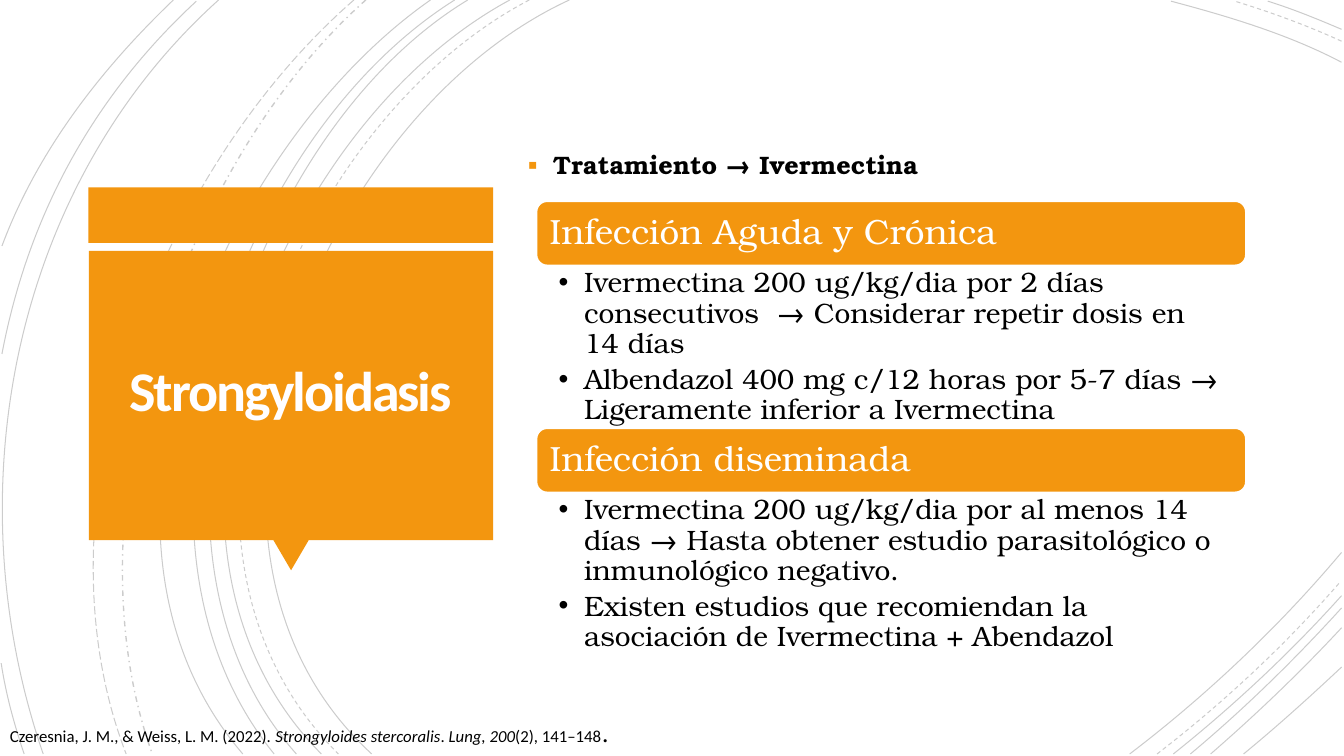
from dataclasses import dataclass
from typing import Any, Optional

from lxml.etree import SubElement
from pptx import Presentation
from pptx.dml.color import RGBColor
from pptx.enum.dml import MSO_LINE
from pptx.enum.shapes import MSO_SHAPE
from pptx.enum.text import MSO_ANCHOR, MSO_AUTO_SIZE, PP_ALIGN
from pptx.oxml.ns import qn
from pptx.util import Cm, Pt

ORANGE, WHITE, BLACK = "F3960F", "FFFFFF", "000000"
SANS, SERIF = "Calibri", "TeX Gyre Bonum"
INDENT = 0.64
BAR_LEFT, BAR_WIDTH, BAR_HEIGHT = 13.52, 17.88, 1.62
FIRST_BAR_TOP, SECTION_PITCH = 5.07, 5.72


@dataclass
class Curve:
    """Cubic curve given by its start, two control points and end, in cm."""
    points: tuple
    dash: Any = MSO_LINE.SOLID
    width: float = 0.75


@dataclass
class Section:
    heading: str
    items: tuple


@dataclass
class Bullet:
    character: str
    color: Optional[str] = None
    percent: int = 100


CURVES = (
    Curve(((14.35, 0), (8, 2.92), (3.63, 13.72), (9.37, 19))),
    Curve(((33.81, 1.57), (32.46, 0.86), (30.94, 0.41), (29.51, 0.03))),
    Curve(((28.47, 19), (30.4, 17.53), (32.23, 15.8), (33.81, 13.92))),
    Curve(((13.34, 0), (7.24, 3.18), (3.12, 13.64), (8.53, 19)), MSO_LINE.DASH),
    Curve(((33.81, 1.04), (32.94, 0.64), (32, 0.3), (31.12, 0.03)), MSO_LINE.DASH),
    Curve(((29.16, 19), (30.81, 17.73), (32.39, 16.26), (33.78, 14.66)), MSO_LINE.DASH),
    Curve(((12.85, 0), (6.86, 3.23), (2.79, 13.64), (8.1, 19))),
    Curve(((33.81, 0.74), (33.2, 0.48), (32.59, 0.23), (31.95, 0.03))),
    Curve(((29.57, 19), (31.06, 17.81), (32.51, 16.46), (33.81, 15.01))),
    Curve(((11.79, 0), (6.2, 3.38), (2.79, 13.74), (7.47, 19))),
    Curve(((30, 19), (31.34, 17.88), (32.61, 16.64), (33.81, 15.32))),
    Curve(((11.46, 0), (5.87, 3.51), (2.46, 13.54), (6.91, 19))),
    Curve(((30.51, 19), (31.65, 18.01), (32.77, 16.94), (33.81, 15.82))),
    Curve(((10.85, 0), (5.51, 3.73), (1.35, 13.44), (6.12, 19))),
    Curve(((31.34, 19), (32.18, 18.31), (32.99, 17.58), (33.81, 16.81))),
    Curve(((9.22, 0), (4.47, 4.22), (1.65, 12.93), (3.84, 19)), MSO_LINE.DASH_DOT, 1),
    Curve(((8.92, 0), (3.99, 4.29), (0.74, 12.67), (3.18, 19)), MSO_LINE.LONG_DASH),
    Curve(((5.51, 0), (0.28, 4.7), (-1.17, 12.45), (1.09, 19))),
    Curve(((4.95, 0.03), (2.34, 2.44), (0.71, 5.44), (0.05, 8.92))),
    Curve(((0.03, 16.71), (0.15, 17.5), (0.36, 18.26), (0.61, 19))),
    Curve(((4.37, 0), (2.54, 1.75), (0.94, 3.81), (0.05, 6.2))),
)

SECTIONS = (
    Section("Infección Aguda y Crónica", (
        "Ivermectina 200 ug/kg/dia por 2 días consecutivos  → Considerar repetir dosis en 14 días",
        "Albendazol 400 mg c/12 horas por 5-7 días → Ligeramente inferior a Ivermectina",
    )),
    Section("Infección diseminada", (
        "Ivermectina 200 ug/kg/dia por al menos 14 días → Hasta obtener estudio "
        "parasitológico o inmunológico negativo.",
        "Existen estudios que recomiendan la asociación de Ivermectina + Abendazol",
    )),
)

CITATION = (
    ("Czeresnia, J. M., & Weiss, L. M. (2022). ", {}),
    ("Strongyloides stercoralis", {"italic": True}),
    (". ", {}),
    ("Lung, 200", {"italic": True}),
    ("(2), 141–148", {}),
    (".", {"size": Pt(18), "name": SERIF}),
)


def set_attributes(target: Any, values: dict) -> None:
    for name, value in values.items():
        setattr(target, name, value)


def paint(color_format: Any, color: str) -> None:
    color_format.rgb = RGBColor.from_string(color)


def place(shape: Any, left: float, top: float, width: float, height: float) -> None:
    set_attributes(shape, {"left": Cm(left), "top": Cm(top),
                           "width": Cm(width), "height": Cm(height)})


def format_frame(frame: Any, anchor: Any, margins: tuple,
                 auto_size: Any = MSO_AUTO_SIZE.NONE) -> None:
    """Set wrapping, anchor and the left, top, right and bottom margins in cm."""
    sides = ("margin_left", "margin_top", "margin_right", "margin_bottom")
    set_attributes(frame, {"word_wrap": True, "auto_size": auto_size,
                           "vertical_anchor": anchor})
    set_attributes(frame, {side: Cm(margin) for side, margin in zip(sides, margins)})


def add_run(paragraph: Any, text: str, color: str, font: dict) -> Any:
    run = paragraph.add_run()
    run.text = text
    set_attributes(run.font, font)
    paint(run.font.color, color)
    return run


def add_bullet(paragraph: Any, bullet: Bullet) -> None:
    properties = paragraph._p.get_or_add_pPr()
    properties.set("marL", str(Cm(INDENT)))
    properties.set("indent", str(-Cm(INDENT)))
    if bullet.color:
        SubElement(SubElement(properties, qn("a:buClr")), qn("a:srgbClr"), val=bullet.color)
    SubElement(properties, qn("a:buSzPct"), val=str(bullet.percent * 1000))
    SubElement(properties, qn("a:buFont"), typeface="Arial")
    SubElement(properties, qn("a:buChar"), char=bullet.character)


def draw_curve(slide: Any, curve: Curve) -> None:
    """Build the control polygon, then turn its three segments into one cubic."""
    start, *others = [tuple(map(Cm, point)) for point in curve.points]
    builder = slide.shapes.build_freeform(*start)
    builder.add_line_segments(others, close=False)
    shape = builder.convert_to_shape()
    outline = shape.element.find(".//" + qn("a:path"))
    segments = outline.findall(qn("a:lnTo"))
    cubic = SubElement(outline, qn("a:cubicBezTo"))
    for segment in segments:
        cubic.append(segment[0])
        outline.remove(segment)

    shape.shadow.inherit = False
    shape.fill.background()
    set_attributes(shape.line, {"width": Pt(curve.width), "dash_style": curve.dash})
    paint(shape.line.color, BLACK)
    color = shape.line._ln.find(".//" + qn("a:srgbClr"))
    SubElement(color, qn("a:alpha"), val="20000")


def add_block(slide: Any, kind: Any, *box: float) -> Any:
    """Add an orange shape without outline; box is in cm."""
    shape = slide.shapes.add_shape(kind, *map(Cm, box))
    shape.shadow.inherit = False
    shape.fill.solid()
    paint(shape.fill.fore_color, ORANGE)
    shape.line.fill.background()
    return shape


def draw_section(slide: Any, section: Section, top: float) -> None:
    bar = add_block(slide, MSO_SHAPE.ROUNDED_RECTANGLE, BAR_LEFT, top, BAR_WIDTH, BAR_HEIGHT)
    bar.line.width = Pt(1.25)
    bar.line.fill.solid()
    paint(bar.line.color, WHITE)
    format_frame(bar.text_frame, MSO_ANCHOR.MIDDLE, (0.25,) * 4)
    heading = bar.text_frame.paragraphs[0]
    set_attributes(heading, {"alignment": PP_ALIGN.LEFT, "line_spacing": 0.9})
    add_run(heading, section.heading, WHITE, {"size": Pt(25), "name": SERIF})

    box = slide.shapes.add_textbox(
        *map(Cm, (BAR_LEFT, top + BAR_HEIGHT, BAR_WIDTH, SECTION_PITCH - BAR_HEIGHT)))
    frame = box.text_frame
    format_frame(frame, MSO_ANCHOR.TOP, (0.56, 0.08, 0.48, 0.08))
    for number, item in enumerate(section.items):
        paragraph = frame.add_paragraph() if number else frame.paragraphs[0]
        set_attributes(paragraph, {"level": 1, "line_spacing": 0.9, "space_after": Pt(4)})
        add_bullet(paragraph, Bullet("•"))
        add_run(paragraph, item, BLACK, {"size": Pt(20), "name": SERIF})


def main() -> None:
    presentation = Presentation()
    set_attributes(presentation, {"slide_width": Cm(33.87), "slide_height": Cm(19.05)})
    slide = presentation.slides.add_slide(presentation.slide_layouts[1])
    title, body = slide.placeholders

    for curve in CURVES:
        draw_curve(slide, curve)
    add_block(slide, MSO_SHAPE.RECTANGLE, 2.23, 4.72, 10.2, 1.4)
    pointer = add_block(slide, MSO_SHAPE.ISOSCELES_TRIANGLE, 6.89, 13.61, 0.89, 0.76)
    pointer.rotation = 180
    add_block(slide, MSO_SHAPE.RECTANGLE, 2.24, 6.32, 10.19, 7.29)

    for placeholder in (title, body):
        placeholder.element.getparent().append(placeholder.element)

    place(title, 2.46, 6.53, 9.73, 6.83)
    format_frame(title.text_frame, MSO_ANCHOR.MIDDLE, (0.64,) * 4)
    paragraph = title.text_frame.paragraphs[0]
    set_attributes(paragraph, {"alignment": PP_ALIGN.CENTER, "line_spacing": 0.85})
    run = add_run(paragraph, "Strongyloidasis", "FFFEFF",
                  {"size": Pt(40), "name": SANS, "bold": True})
    run._r.get_or_add_rPr().set("spc", "-150")

    place(body, 13.05, 3.09, 17.5, 1.96)
    format_frame(body.text_frame, MSO_ANCHOR.MIDDLE, (0.25, 0.13, 0.25, 0.13))
    paragraph = body.text_frame.paragraphs[0]
    set_attributes(paragraph, {"line_spacing": 1.2, "space_before": Pt(0)})
    add_bullet(paragraph, Bullet("▪", ORANGE, 110))
    add_run(paragraph, "Tratamiento → Ivermectina", BLACK,
            {"size": Pt(18), "name": SERIF, "bold": True})

    for number, section in enumerate(SECTIONS):
        draw_section(slide, section, FIRST_BAR_TOP + number * SECTION_PITCH)

    citation = slide.shapes.add_textbox(*map(Cm, (0, 17.94, 26.82, 1.02)))
    format_frame(citation.text_frame, MSO_ANCHOR.TOP, (0.25, 0.13, 0.25, 0.13),
                 MSO_AUTO_SIZE.SHAPE_TO_FIT_TEXT)
    for text, changes in CITATION:
        add_run(citation.text_frame.paragraphs[0], text, BLACK,
                {"size": Pt(12), "name": SANS, **changes})
    presentation.save("out.pptx")


if __name__ == "__main__":
    main()
